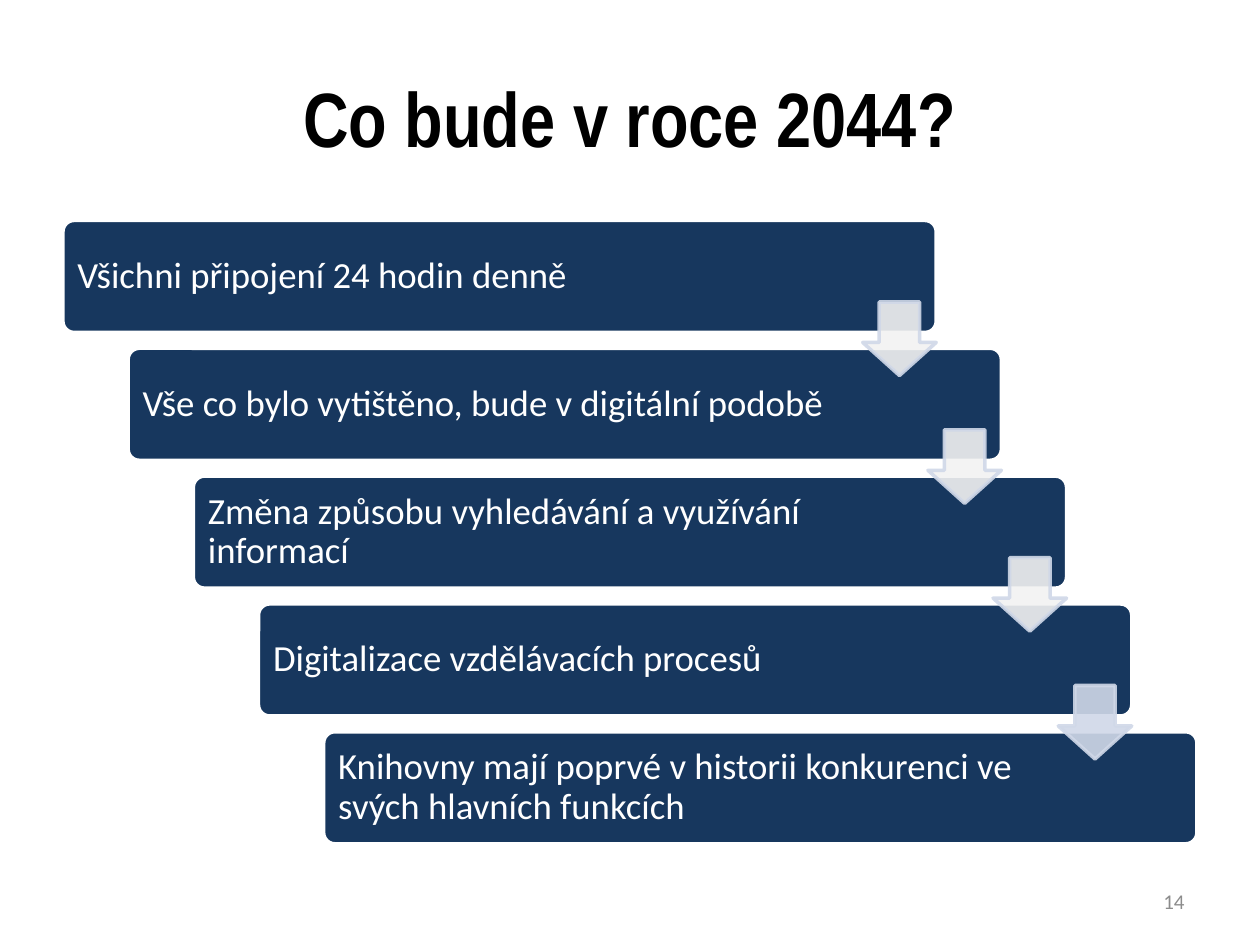
from lxml import etree
from pptx import Presentation
from pptx.dml.color import RGBColor
from pptx.enum.shapes import MSO_SHAPE
from pptx.enum.text import MSO_ANCHOR, PP_ALIGN
from pptx.oxml.ns import qn
from pptx.util import Pt

BAR = MSO_SHAPE.ROUNDED_RECTANGLE
ARROW = MSO_SHAPE.DOWN_ARROW
MIDDLE = MSO_ANCHOR.MIDDLE
CENTER, LEFT, RIGHT = PP_ALIGN.CENTER, PP_ALIGN.LEFT, PP_ALIGN.RIGHT

NAVY, WHITE, PALE_BLUE, PALE_GREY = "17375E", "FFFFFF", "D0D8E8", "F2F2F2"
STEPS = [
    "Všichni připojení 24 hodin denně",
    "Vše co bylo vytištěno, bude v digitální podobě",
    "Změna způsobu vyhledávání a využívání informací",
    "Digitalizace vzdělávacích procesů",
    "Knihovny mají poprvé v historii konkurenci ve svých hlavních funkcích",
]
ARROW_FILLS = [PALE_GREY, PALE_GREY, PALE_GREY, PALE_BLUE]


def color(value):
    return RGBColor.from_string(value)


def place(shape, box):
    shape.left, shape.top, shape.width, shape.height = map(Pt, box)


def write(shape, text, size, font, ink, align, bold=False):
    frame = shape.text_frame
    frame.word_wrap = True
    frame.vertical_anchor = MIDDLE
    para = frame.paragraphs[0]
    para.text = text
    para.alignment = align
    para.font.size = Pt(size)
    para.font.name = font
    para.font.bold = bold
    para.font.color.rgb = color(ink)
    return frame


def add_block(shapes, kind, box, adjustments, fill, line, opacity=100):
    block = shapes.add_shape(kind, *map(Pt, box))
    block.shadow.inherit = False
    for index, value in enumerate(adjustments):
        block.adjustments[index] = value
    block.fill.solid()
    block.fill.fore_color.rgb = color(fill)
    block.line.color.rgb = color(line)
    block.line.width = Pt(2)
    if opacity < 100:
        for tint in block._element.spPr.iter(qn("a:srgbClr")):
            etree.SubElement(tint, qn("a:alpha"), val=str(opacity * 1000))


def add_title(page, box):
    title = page.shapes.title
    place(title, box)
    write(title, "Co bude v roce 2044?", 44, "Arial Narrow", "000000", CENTER, True)


def add_staircase(page, box):
    left, top, width, height = box
    bar_width, bar_height = 499, 64
    step_x = (width - bar_width) / (len(STEPS) - 1)
    step_y = (height - bar_height) / (len(STEPS) - 1)
    group = page.shapes.add_group_shape().shapes

    # Bars with their labels
    for index, text in enumerate(STEPS):
        x, y = left + index * step_x, top + index * step_y
        add_block(group, BAR, (x, y, bar_width, bar_height), [0.1], NAVY, WHITE)
        label = group.add_textbox(Pt(x + 2), Pt(y + 2), Pt(416), Pt(60))
        frame = write(label, text, 21, "Calibri", WHITE, LEFT)
        frame.paragraphs[0].line_spacing = 0.9
        frame.margin_left = frame.margin_right = Pt(6.3)
        frame.margin_top = frame.margin_bottom = Pt(6.3)

    # Arrows from each bar to the next, flush with the bar's right edge
    side = 42
    for index, fill in enumerate(ARROW_FILLS):
        x = left + index * step_x + bar_width - side
        y = top + index * step_y + 46.6
        add_block(group, ARROW, (x, y, side, side), [0.55, 0.45], fill, PALE_BLUE, 90)


def add_page_number(page, box):
    number = page.shapes.add_textbox(*map(Pt, box))
    write(number, "14", 12, "Calibri", "8C8C8C", RIGHT)


def main():
    deck = Presentation()
    deck.slide_width, deck.slide_height = Pt(720), Pt(540)
    page = deck.slides.add_slide(deck.slide_layouts[5])
    add_title(page, (36, 21.6, 648, 90))
    add_staircase(page, (36, 126, 648, 356.2))
    add_page_number(page, (516, 500.5, 168, 28.75))
    deck.save("out.pptx")


if __name__ == "__main__":
    main()
